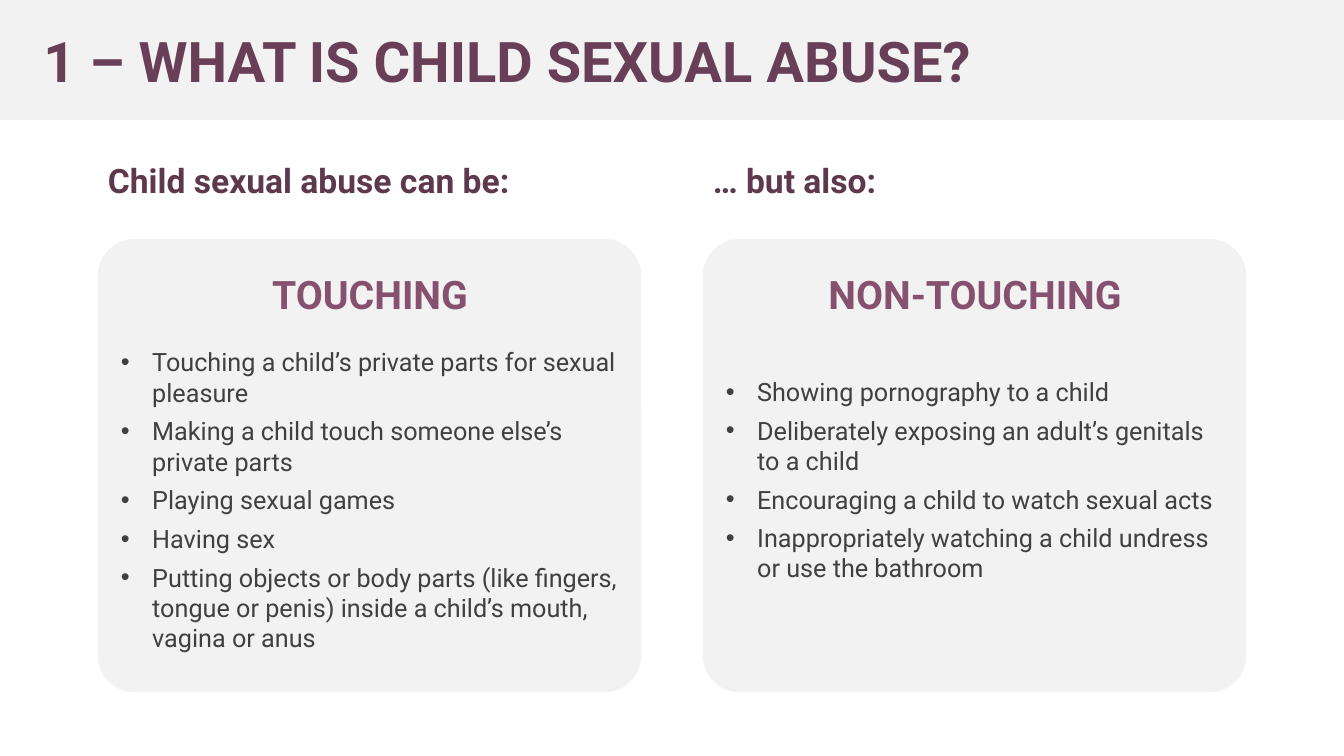
from lxml.etree import SubElement
from pptx import Presentation
from pptx.dml.color import RGBColor
from pptx.enum.shapes import MSO_SHAPE as Shape
from pptx.enum.text import MSO_ANCHOR as Anchor, MSO_AUTO_SIZE as AutoSize, PP_ALIGN as Align
from pptx.oxml.ns import qn
from pptx.util import Inches, Pt

TITLE = "1 – WHAT IS CHILD SEXUAL ABUSE?"
COLUMNS = [
    {"lead": "Child sexual abuse can be:", "heading": "TOUCHING", "gap": 21.1,
     "points": ["Touching a child’s private parts for sexual pleasure",
                "Making a child touch someone else’s private parts",
                "Playing sexual games",
                "Having sex",
                "Putting objects or body parts (like fingers, tongue or penis) "
                "inside a child’s mouth, vagina or anus"]},
    {"lead": "… but also:", "heading": "NON-TOUCHING", "gap": 42.2,
     "points": ["Showing pornography to a child",
                "Deliberately exposing an adult’s genitals to a child",
                "Encouraging a child to watch sexual acts",
                "Inappropriately watching a child undress or use the bathroom"]},
]
COLORS = {"panel": "F2F2F2", "title": "683F56", "lead": "5E384D",
          "heading": "86516F", "text": "404040"}
FONT = "Roboto"
LEFT, COLUMN_STEP = 0.97, 6.0
LEAD_TOP, LEAD_WIDTH, LEAD_HEIGHT = 1.54, 4.96, 0.5
CARD_TOP, CARD_WIDTH, CARD_HEIGHT = 2.37, 5.39, 4.5
INDENT = Inches(0.31)


def color(name):
    return RGBColor.from_string(COLORS[name])


def fill_panel(panel):
    panel.fill.solid()
    panel.fill.fore_color.rgb = color("panel")


def place(holder, left, top, width, height, margins, anchor=Anchor.TOP):
    """Move a placeholder, set its margins (left, top, right, bottom) and return its frame."""
    holder.left, holder.top = Inches(left), Inches(top)
    holder.width, holder.height = Inches(width), Inches(height)
    frame = holder.text_frame
    frame.word_wrap = True
    frame.auto_size = AutoSize.NONE
    frame.vertical_anchor = anchor
    (frame.margin_left, frame.margin_top,
     frame.margin_right, frame.margin_bottom) = map(Inches, margins)
    return frame


def write(paragraph, text, size, color_name, bold=True, align=Align.LEFT, after=0):
    paragraph.text = text
    paragraph.alignment = align
    paragraph.space_before, paragraph.space_after = Pt(0), Pt(after)
    font = paragraph.font
    font.name, font.size, font.bold = FONT, Pt(size), bold
    font.color.rgb = color(color_name)


def set_indent(paragraph, left, first, bullet=True):
    properties = paragraph._p.get_or_add_pPr()
    properties.set("marL", str(left))
    properties.set("indent", str(first))
    if not bullet:
        properties.insert_element_before(
            SubElement(properties, qn("a:buNone")), "a:tabLst", "a:defRPr", "a:extLst")


def add_card(slide, left):
    card = slide.shapes.add_shape(Shape.ROUNDED_RECTANGLE, Inches(left), Inches(CARD_TOP),
                                  Inches(CARD_WIDTH), Inches(CARD_HEIGHT))
    card.adjustments[0] = 0.082
    card.shadow.inherit = False
    card.line.fill.background()
    fill_panel(card)
    slide.shapes._spTree.insert(2, card._element)  # behind the placeholders


def fill_column(slide, column, left, lead_holder, list_holder):
    lead = place(lead_holder, left, LEAD_TOP, LEAD_WIDTH, LEAD_HEIGHT, (0.1, 0.05, 0.1, 0.05))
    write(lead.paragraphs[0], column["lead"], 24, "lead")

    add_card(slide, left)
    body = place(list_holder, left, CARD_TOP, CARD_WIDTH, CARD_HEIGHT, (0.23, 0.31, 0.22, 0.31))
    heading = body.paragraphs[0]
    write(heading, column["heading"], 28, "heading", align=Align.CENTER, after=column["gap"])
    set_indent(heading, 0, 0, bullet=False)
    for point in column["points"]:
        item = body.add_paragraph()
        write(item, point, 18, "text", bold=False, after=6)
        set_indent(item, INDENT, -INDENT)


def main():
    deck = Presentation()
    deck.slide_width, deck.slide_height = Inches(13.33), Inches(7.5)
    slide = deck.slides.add_slide(deck.slide_layouts.get_by_name("Comparison"))
    title, *holders = slide.placeholders

    header = place(title, 0, 0, 13.33, 1.19, (0.43, 0.05, 0.1, 0.05), Anchor.MIDDLE)
    fill_panel(title)
    write(header.paragraphs[0], TITLE, 40, "title")

    for index, column in enumerate(COLUMNS):
        lead_holder, list_holder = holders[2 * index:2 * index + 2]
        fill_column(slide, column, LEFT + index * COLUMN_STEP, lead_holder, list_holder)
    deck.save("out.pptx")


if __name__ == "__main__":
    main()
